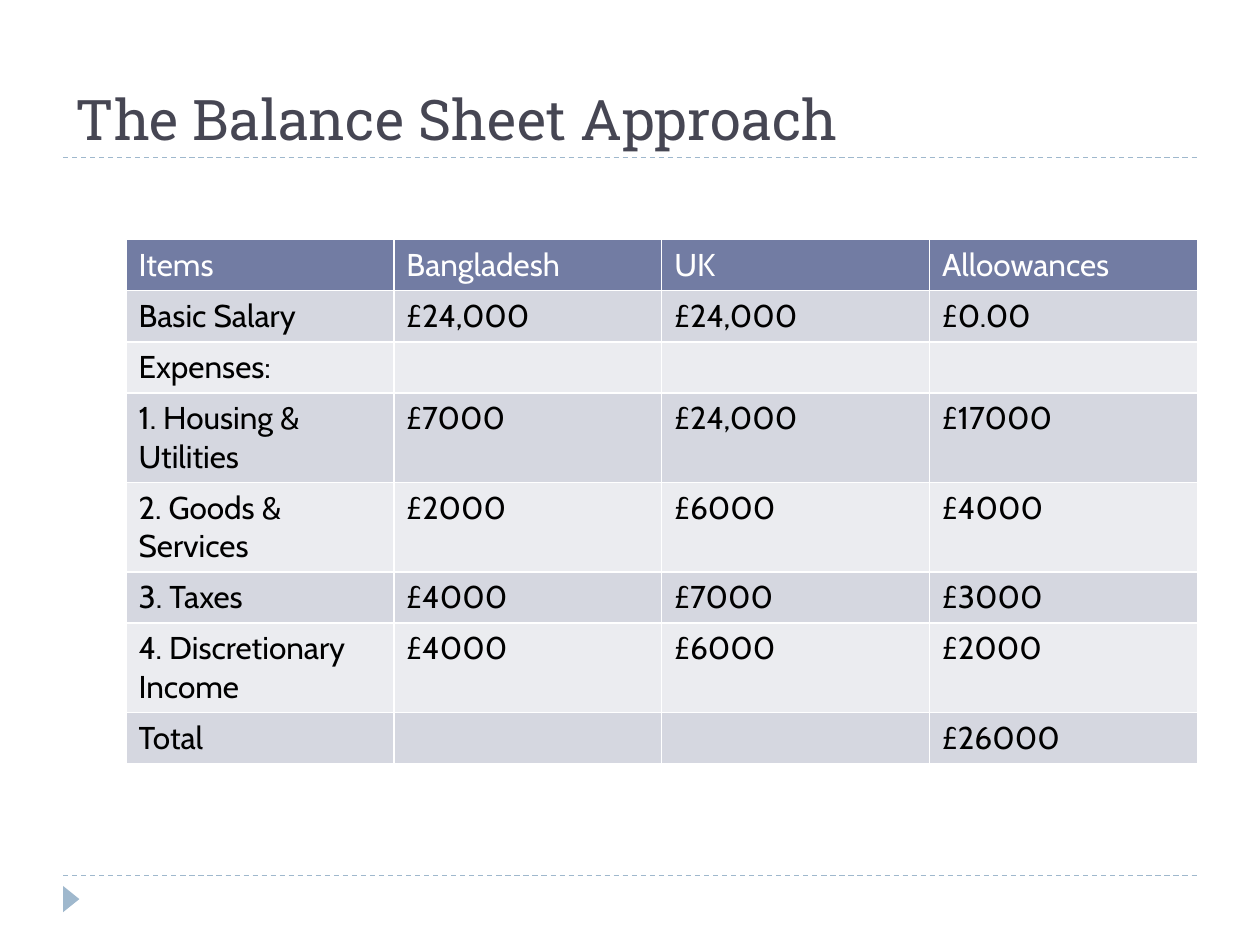
from lxml.etree import SubElement
from pptx import Presentation
from pptx.dml.color import RGBColor
from pptx.enum.dml import MSO_LINE
from pptx.enum.shapes import MSO_CONNECTOR, MSO_SHAPE
from pptx.enum.text import MSO_ANCHOR, MSO_AUTO_SIZE, PP_ALIGN
from pptx.oxml.ns import qn
from pptx.util import Cm, Pt

COLORS = {
    "title": "464653",
    "accent": "9FB8CD",
    "header": "727CA3",
    "header_text": "FFFFFF",
    "dark_band": "D5D7E0",
    "light_band": "EBECF0",
    "text": "000000",
}
ROWS = [
    ["Items", "Bangladesh", "UK", "Alloowances"],
    ["Basic Salary", "£24,000", "£24,000", "£0.00"],
    ["Expenses:", "", "", ""],
    ["1. Housing & Utilities", "£7000", "£24,000", "£17000"],
    ["2. Goods & Services", "£2000", "£6000", "£4000"],
    ["3. Taxes", "£4000", "£7000", "£3000"],
    ["4. Discretionary Income", "£4000", "£6000", "£2000"],
    ["Total", "", "", "£26000"],
]


def color(name):
    return RGBColor.from_string(COLORS[name])


def format_font(font, name, size, color_name):
    font.name = name
    font.size = Pt(size)
    font.bold = False
    font.color.rgb = color(color_name)


presentation = Presentation()
presentation.slide_width = Cm(25.4)
presentation.slide_height = Cm(19.05)
slide = presentation.slides.add_slide(presentation.slide_layouts[5])

# Dashed rules under the title and above the footer
for y in (17.65, 3.18):
    rule = slide.shapes.add_connector(
        MSO_CONNECTOR.STRAIGHT, Cm(1.27), Cm(y), Cm(24.13), Cm(y))
    rule.line.color.rgb = color("accent")
    rule.line.width = Pt(0.75)
    rule.line.dash_style = MSO_LINE.DASH
    SubElement(rule._element.spPr, qn("a:effectLst"))

# Footer marker
marker = slide.shapes.add_shape(
    MSO_SHAPE.ISOSCELES_TRIANGLE, Cm(1.17), Cm(17.96), Cm(0.53), Cm(0.33))
marker.rotation = 90
marker.shadow.inherit = False
marker.fill.solid()
marker.fill.fore_color.rgb = color("accent")
marker.line.fill.background()

# Title
title = slide.shapes.title
title.left, title.top = Cm(1.27), Cm(0.43)
title.width, title.height = Cm(22.86), Cm(2.75)
title.text_frame.text = "The Balance Sheet Approach"
title.text_frame.word_wrap = True
title.text_frame.auto_size = MSO_AUTO_SIZE.NONE
title.text_frame.vertical_anchor = MSO_ANCHOR.BOTTOM
paragraph = title.text_frame.paragraphs[0]
paragraph.alignment = PP_ALIGN.LEFT
format_font(paragraph.font, "Roboto Slab", 32, "title")

# Allowances table, whose default style draws the white borders
row_height = Cm(1.03)
table = slide.shapes.add_table(
    len(ROWS), len(ROWS[0]), Cm(2.54), Cm(4.83),
    Cm(21.6), row_height * len(ROWS)).table
for row in table.rows:
    row.height = row_height
for row_index, values in enumerate(ROWS):
    if row_index == 0:
        fill_name, text_name = "header", "header_text"
    else:
        fill_name = "dark_band" if row_index % 2 else "light_band"
        text_name = "text"
    for column_index, value in enumerate(values):
        cell = table.cell(row_index, column_index)
        cell.text = value
        cell.fill.solid()
        cell.fill.fore_color.rgb = color(fill_name)
        format_font(cell.text_frame.paragraphs[0].font, "Cabin", 18, text_name)

presentation.save("out.pptx")
